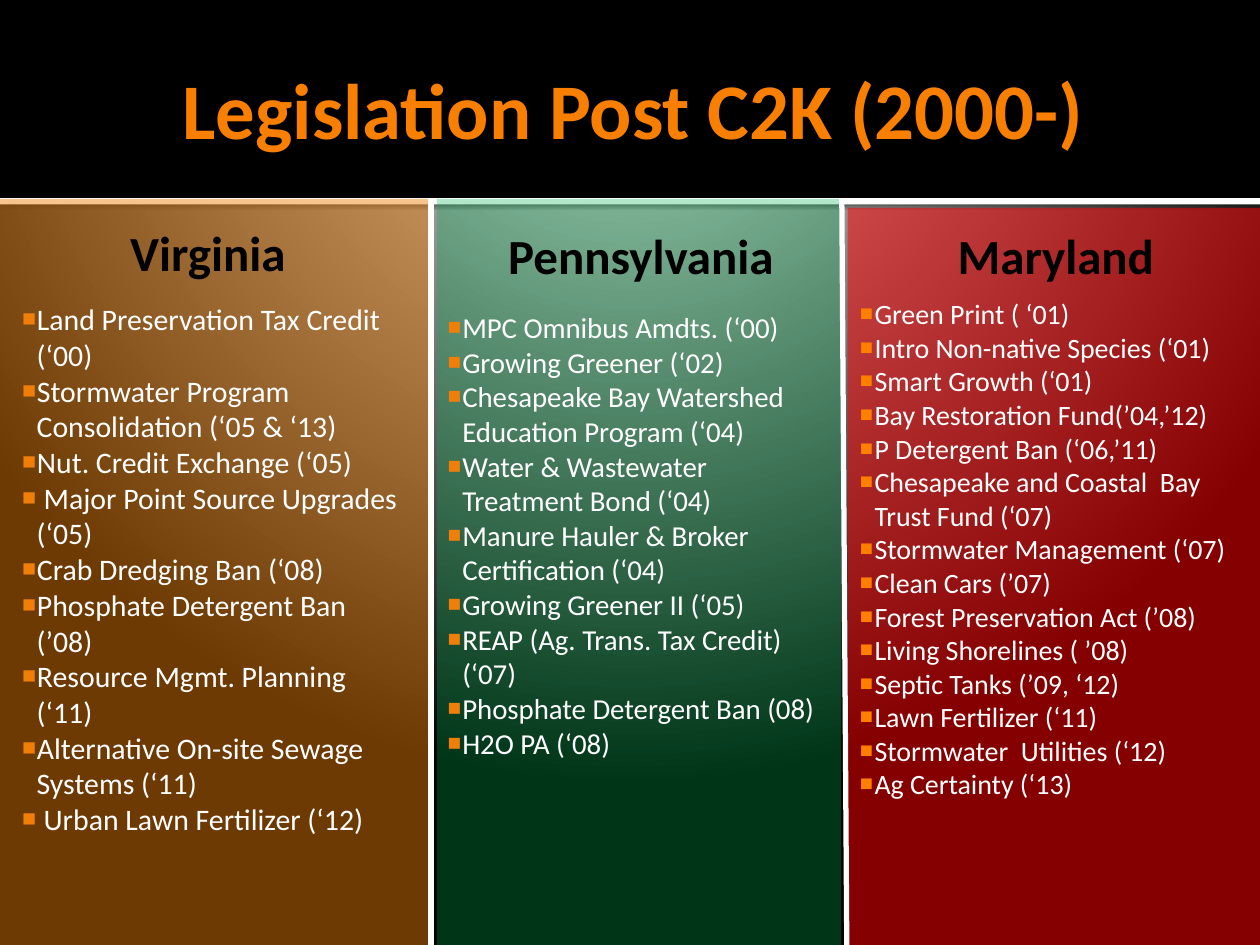
from dataclasses import dataclass
from typing import Any

from pptx import Presentation
from pptx.dml.color import RGBColor
from pptx.enum.shapes import MSO_CONNECTOR, MSO_SHAPE
from pptx.enum.text import MSO_ANCHOR, MSO_AUTO_SIZE, PP_ALIGN
from pptx.oxml import parse_xml
from pptx.oxml.ns import nsdecls, qn
from pptx.util import Cm, Pt

RECTANGLE = MSO_SHAPE.RECTANGLE
STRAIGHT = MSO_CONNECTOR.STRAIGHT
LEFT, CENTER = PP_ALIGN.LEFT, PP_ALIGN.CENTER
MIDDLE = MSO_ANCHOR.MIDDLE
NO_FIT = MSO_AUTO_SIZE.NONE

BLACK = RGBColor(0x00, 0x00, 0x00)
WHITE = RGBColor(0xFF, 0xFF, 0xFF)
TITLE_ORANGE = RGBColor(0xF9, 0x7F, 0x00)
ORANGE = RGBColor(0xF0, 0x7F, 0x09)
BRIGHT_ORANGE = RGBColor(0xFF, 0x80, 0x00)
GREEN = RGBColor(0x00, 0xB0, 0x50)
RED = RGBColor(0xFF, 0x00, 0x00)

BACKGROUND_STOPS = [(0, "C0C0C0"), (12, "C0C0C0"), (20, "BEBEBE"), (100, "000000")]

# Each line break inside an entry is a "\v".
STATES = [
    dict(name="Virginia", color=ORANGE, opacity=46, panel=(0, 4.01, 8.69, 15.04),
         heading=(0.05, 4.37, 8.28, 1.45), items_box=(0.18, 5.94, 8.46, 11.89),
         size=17, bullet_color=ORANGE, items=[
             "Land Preservation Tax Credit\v(‘00)",
             "Stormwater Program\vConsolidation (‘05 & ‘13)",
             "Nut. Credit Exchange (‘05)",
             " Major Point Source Upgrades\v(‘05)",
             "Crab Dredging Ban (‘08)",
             "Phosphate Detergent Ban\v(’08)",
             "Resource Mgmt. Planning\v(‘11)",
             "Alternative On-site Sewage\vSystems (‘11)",
             " Urban Lawn Fertilizer (‘12)"]),
    dict(name="Pennsylvania", color=GREEN, opacity=30, panel=(8.81, 4.01, 8.15, 15.04),
         heading=(8.69, 4.42, 8.46, 1.45), items_box=(8.76, 6.12, 8.23, 10.19),
         size=16.5, bullet_color=ORANGE, items=[
             "MPC Omnibus Amdts. (‘00)",
             "Growing Greener (‘02)",
             "Chesapeake Bay Watershed\vEducation Program (‘04)",
             "Water & Wastewater\vTreatment Bond (‘04)",
             "Manure Hauler & Broker\vCertification (‘04)",
             "Growing Greener II (‘05)",
             "REAP (Ag. Trans. Tax Credit)\v(‘07)",
             "Phosphate Detergent Ban (08)",
             "H2O PA (‘08)"]),
    dict(name="Maryland", color=RED, opacity=52, panel=(17.09, 4.19, 8.31, 14.86),
         heading=(16.41, 4.42, 9.75, 1.45), items_box=(17.07, 5.86, 8.33, 11.41),
         size=16, bullet_color=BRIGHT_ORANGE, items=[
             "Green Print ( ‘01)",
             "Intro Non-native Species (‘01)",
             "Smart Growth (‘01)",
             "Bay Restoration Fund(’04,’12)",
             "P Detergent Ban (‘06,’11)",
             "Chesapeake and Coastal  Bay\vTrust Fund (‘07)",
             "Stormwater Management (‘07)",
             "Clean Cars (’07)",
             "Forest Preservation Act (’08)",
             "Living Shorelines ( ’08)",
             "Septic Tanks (’09, ‘12)",
             "Lawn Fertilizer (‘11)",
             "Stormwater  Utilities (‘12)",
             "Ag Certainty (‘13)"]),
]


def write(frame, lines, size, color, bold=False, align=LEFT, font="Calibri", bullet_color=None):
    frame.word_wrap = True
    frame.auto_size = NO_FIT
    frame.text = "\n".join(lines)
    for para in frame.paragraphs:
        para.alignment = align
        for span in para.runs:
            span.font.name, span.font.size, span.font.bold = font, Pt(size), bold
            span.font.color.rgb = color
        if bullet_color is not None:
            add_bullet(para, bullet_color)


def add_bullet(para, color, hanging=Cm(0.31)):
    properties = para._p.get_or_add_pPr()
    properties.set("marL", str(hanging))
    properties.set("indent", str(-hanging))
    for tag, content in (("buClr", f'><a:srgbClr val="{color}"/></a:buClr>'),
                         ("buSzPct", ' val="149000"/>'),
                         ("buFont", ' typeface="Calibri"/>'),
                         ("buChar", ' char="▪"/>')):
        properties.append(parse_xml(f'<a:{tag} {nsdecls("a")}{content}'))


@dataclass
class StateSlide:
    slide: Any

    def background(self, stops):
        """Fill the background with a circular gradient centred above the slide."""
        self.slide.background.fill.gradient()
        gradient = self.slide.element.find(".//" + qn("a:gradFill"))
        marks = "".join(f'<a:gs pos="{position * 1000}"><a:srgbClr val="{color}"/></a:gs>'
                        for position, color in stops)
        gradient.getparent().replace(gradient, parse_xml(
            f'<a:gradFill {nsdecls("a")} rotWithShape="1"><a:gsLst>{marks}</a:gsLst>'
            '<a:path path="circle"><a:fillToRect l="10000" t="-25000" r="10000" b="125000"/>'
            '</a:path></a:gradFill>'))

    def rectangle(self, place, color, opacity=100):
        shape = self.slide.shapes.add_shape(RECTANGLE, *map(Cm, place))
        shape.shadow.inherit = False
        shape.line.fill.background()
        shape.fill.solid()
        shape.fill.fore_color.rgb = color
        if opacity < 100:
            shade = shape.element.spPr.find(".//" + qn("a:srgbClr"))
            shade.append(parse_xml(f'<a:alpha {nsdecls("a")} val="{opacity * 1000}"/>'))
        return shape

    def drop_shadow(self, shape):
        effects = shape.element.spPr.find(qn("a:effectLst"))
        effects.append(parse_xml(
            f'<a:outerShdw {nsdecls("a")} blurRad="{Pt(2.5)}" dist="{Pt(0.8)}" dir="5400000">'
            '<a:srgbClr val="000000"><a:alpha val="60000"/></a:srgbClr></a:outerShdw>'))

    def divider(self, top_x, bottom_x, top=4.01, bottom=19.05):
        line = self.slide.shapes.add_connector(
            STRAIGHT, *map(Cm, (top_x, top, bottom_x, bottom)))
        line.line.color.rgb = WHITE
        line.line.width = Pt(3)
        line.element.spPr.append(parse_xml(f'<a:effectLst {nsdecls("a")}/>'))

    def text(self, place, lines, **style):
        box = self.slide.shapes.add_textbox(*map(Cm, place))
        write(box.text_frame, lines, **style)

    def title(self, place, words, **style):
        title = self.slide.shapes.title
        title.left, title.top, title.width, title.height = map(Cm, place)
        frame = title.text_frame
        frame.vertical_anchor = MIDDLE
        frame.margin_left = Cm(0.25)
        frame.margin_right = frame.margin_top = frame.margin_bottom = Cm(0.13)
        write(frame, [words], **style)
        # Bring the title in front of the header band.
        title.element.getparent().append(title.element)


def main():
    deck = Presentation()
    deck.slide_width, deck.slide_height = Cm(25.4), Cm(19.05)
    page = StateSlide(deck.slides.add_slide(deck.slide_layouts[5]))
    page.background(BACKGROUND_STOPS)

    page.drop_shadow(page.rectangle((0, 3.99, 25.4, 0.13), WHITE))
    page.rectangle((0, 0, 25.4, 3.99), BLACK)
    for state in STATES:
        page.rectangle(state["panel"], state["color"], state["opacity"])
    page.divider(8.69, 8.69)
    page.divider(16.97, 17.07)

    page.title((1.27, 0.43, 22.86, 3.48), "Legislation Post C2K (2000-)",
               size=45, color=TITLE_ORANGE, bold=True, align=CENTER)
    for state in STATES:
        page.text(state["heading"], [state["name"]],
                  size=28, color=BLACK, bold=True, align=CENTER)
        page.text(state["items_box"], state["items"], size=state["size"],
                  color=WHITE, bullet_color=state["bullet_color"])
    deck.save("out.pptx")


if __name__ == "__main__":
    main()
